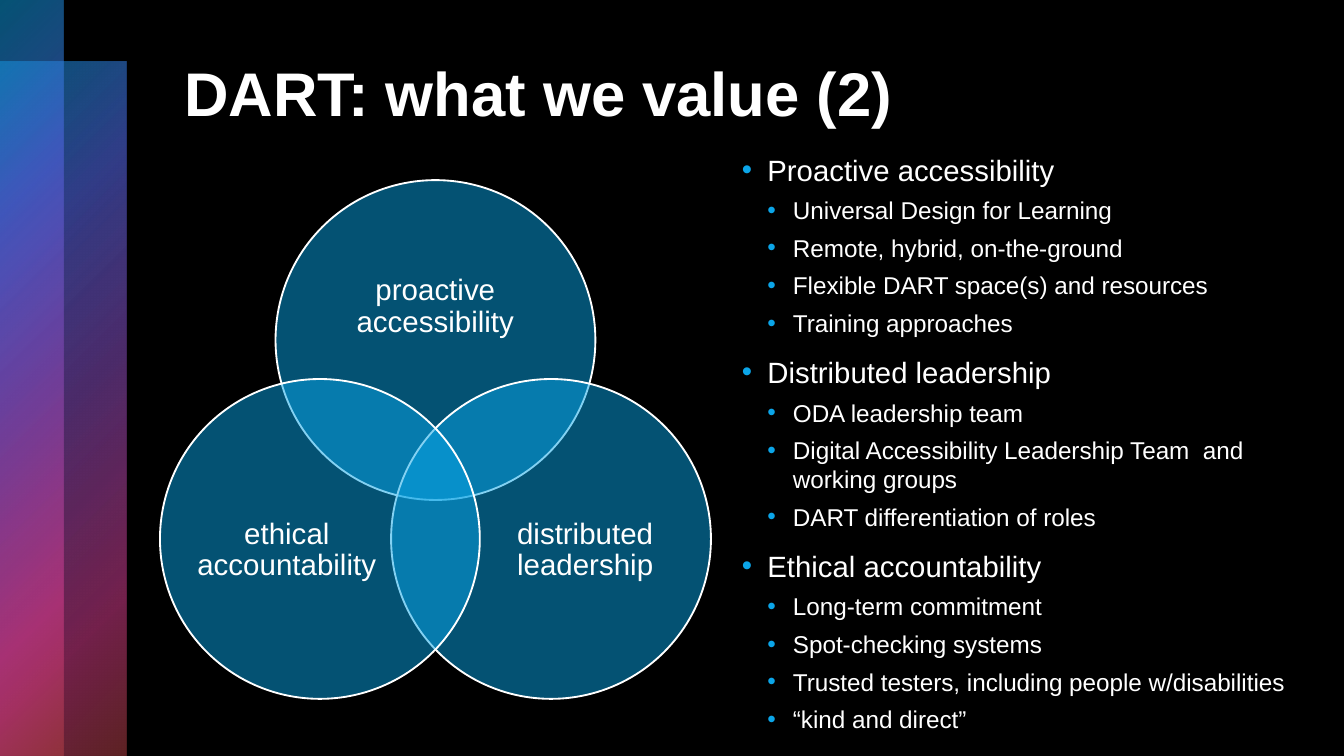
import pptx
import pptx.dml.color
import pptx.enum.shapes
import pptx.enum.text
import pptx.oxml
import pptx.oxml.ns
import pptx.util
from lxml import etree
from pptx.util import Inches

WIDTH = 10
HEIGHT = WIDTH * 9 / 16
COLORS = {"background": "000000", "text": "FFFFFF", "bullet": "0BA5E8", "circle": "09A5E7"}
FONT = "Arial"
# Position in percent, colour, opacity in percent
BAND_STOPS = [(0, "0BA5E8", 50), (25, "5066E1", 60), (50, "894EC0", 55),
              (81, "E54196", 50), (99, "BE4449", 50), (100, "BE4449", 50)]
# Top and width of each band; both run from the left edge to the bottom
BANDS = [(0.46, 0.94), (0, 0.47)]
VALUES = [
    ("Proactive accessibility", [
        "Universal Design for Learning",
        "Remote, hybrid, on-the-ground",
        "Flexible DART space(s) and resources",
        "Training approaches"]),
    ("Distributed leadership", [
        "ODA leadership team",
        "Digital Accessibility Leadership Team  and working groups",
        "DART differentiation of roles"]),
    ("Ethical accountability", [
        "Long-term commitment",
        "Spot-checking systems",
        "Trusted testers, including people w/disabilities",
        "“kind and direct”"]),
]


def rgb(name):
    return pptx.dml.color.RGBColor.from_string(COLORS[name])


def format_runs(paragraph, size, bold=False):
    for run in paragraph.runs:
        run.font.name = FONT
        run.font.size = pptx.util.Pt(size)
        run.font.bold = bold
        run.font.color.rgb = rgb("text")


def prepare_frame(frame, horizontal, vertical, anchor):
    frame.word_wrap = True
    frame.auto_size = pptx.enum.text.MSO_AUTO_SIZE.NONE
    frame.margin_left = frame.margin_right = Inches(horizontal)
    frame.margin_top = frame.margin_bottom = Inches(vertical)
    frame.vertical_anchor = anchor


def add_band(slide, left, top, width, height):
    """Draw a translucent band whose gradient spreads from its top left corner."""
    band = slide.shapes.add_shape(pptx.enum.shapes.MSO_SHAPE.RECTANGLE,
                                  Inches(left), Inches(top), Inches(width), Inches(height))
    band.shadow.inherit = False
    band.line.fill.background()
    stops = "".join(
        f'<a:gs pos="{position * 1000}"><a:srgbClr val="{color}">'
        f'<a:alpha val="{opacity * 1000}"/></a:srgbClr></a:gs>'
        for position, color, opacity in BAND_STOPS)
    gradient = pptx.oxml.parse_xml(
        f'<a:gradFill {pptx.oxml.ns.nsdecls("a")} rotWithShape="1"><a:gsLst>{stops}</a:gsLst>'
        '<a:path path="circle"><a:fillToRect r="100000" b="100000"/></a:path></a:gradFill>')
    band.element.spPr.find(pptx.oxml.ns.qn("a:prstGeom")).addnext(gradient)


def add_title(slide, left, top, width, height):
    title = slide.shapes.title
    title.left, title.top = Inches(left), Inches(top)
    title.width, title.height = Inches(width), Inches(height)
    frame = title.text_frame
    frame.text = "DART: what we value (2)"
    prepare_frame(frame, 0.07, 0.04, pptx.enum.text.MSO_ANCHOR.TOP)
    frame.paragraphs[0].alignment = pptx.enum.text.PP_ALIGN.LEFT
    format_runs(frame.paragraphs[0], 33, bold=True)


def add_circle(group, left, top, diameter):
    circle = group.shapes.add_shape(pptx.enum.shapes.MSO_SHAPE.OVAL, Inches(left), Inches(top),
                                    Inches(diameter), Inches(diameter))
    circle.shadow.inherit = False
    circle.fill.solid()
    circle.fill.fore_color.rgb = rgb("circle")
    color = circle.element.spPr.find(pptx.oxml.ns.qn("a:solidFill"))[0]
    etree.SubElement(color, pptx.oxml.ns.qn("a:alpha"), val="50000")
    circle.line.color.rgb = rgb("text")
    circle.line.width = pptx.util.Pt(1)


def add_label(group, text, left, top, width, height):
    label = group.shapes.add_textbox(Inches(left), Inches(top), Inches(width), Inches(height))
    prepare_frame(label.text_frame, 0, 0, pptx.enum.text.MSO_ANCHOR.MIDDLE)
    paragraph = label.text_frame.paragraphs[0]
    paragraph.text = text
    paragraph.alignment = pptx.enum.text.PP_ALIGN.CENTER
    paragraph.line_spacing = 0.9
    format_runs(paragraph, 15.8)


def add_venn(slide, left, top, width, height):
    """Place three overlapping circles, one centred above two, in the given box."""
    diameter = 2.38
    right, middle, low = width - diameter, (width - diameter) / 2, height - diameter
    # Circle offset in the box, then label box within the circle
    circles = [
        ("proactive accessibility", middle, 0, (0.32, 0.41, 1.74, 1.07)),
        ("distributed leadership", right, low, (0.73, 0.62, 1.43, 1.31)),
        ("ethical accountability", 0, low, (0.23, 0.62, 1.43, 1.31)),
    ]
    group = slide.shapes.add_group_shape()
    for text, x, y, (label_x, label_y, label_width, label_height) in circles:
        add_circle(group, left + x, top + y, diameter)
        add_label(group, text, left + x + label_x, top + y + label_y, label_width, label_height)


def add_bullet(paragraph, text, level, size, space_before):
    paragraph.text = text
    paragraph.level = level
    paragraph.space_before = pptx.util.Pt(space_before)
    format_runs(paragraph, size)
    properties = paragraph._p.get_or_add_pPr()
    properties.set("marL", str(Inches(0.19 * (level + 1))))
    properties.set("indent", str(Inches(-0.19)))
    color = etree.SubElement(properties, pptx.oxml.ns.qn("a:buClr"))
    etree.SubElement(color, pptx.oxml.ns.qn("a:srgbClr"), val=COLORS["bullet"])
    etree.SubElement(properties, pptx.oxml.ns.qn("a:buFont"), typeface=FONT)
    etree.SubElement(properties, pptx.oxml.ns.qn("a:buChar"), char="•")


def add_value_list(slide, left, top, width, height):
    box = slide.shapes.add_textbox(Inches(left), Inches(top), Inches(width), Inches(height))
    frame = box.text_frame
    prepare_frame(frame, 0.07, 0.04, pptx.enum.text.MSO_ANCHOR.TOP)
    for index, (heading, points) in enumerate(VALUES):
        paragraph = frame.add_paragraph() if index else frame.paragraphs[0]
        add_bullet(paragraph, heading, 0, 15.7, 9 if index else 0)
        for point in points:
            add_bullet(frame.add_paragraph(), point, 1, 13, 4.5)


def main():
    presentation = pptx.Presentation()
    presentation.slide_width, presentation.slide_height = Inches(WIDTH), Inches(HEIGHT)
    slide = presentation.slides.add_slide(presentation.slide_layouts.get_by_name("Title Only"))
    slide.background.fill.solid()
    slide.background.fill.fore_color.rgb = rgb("background")
    for top, width in BANDS:
        add_band(slide, 0, top, width, HEIGHT - top)
    add_title(slide, 1.3, 0.37, 7.78, 1.27)
    add_venn(slide, 1.19, 1.34, 4.1, 3.86)
    add_value_list(slide, 5.45, 1.09, 4.31, 4.53)
    presentation.save("out.pptx")


if __name__ == "__main__":
    main()
